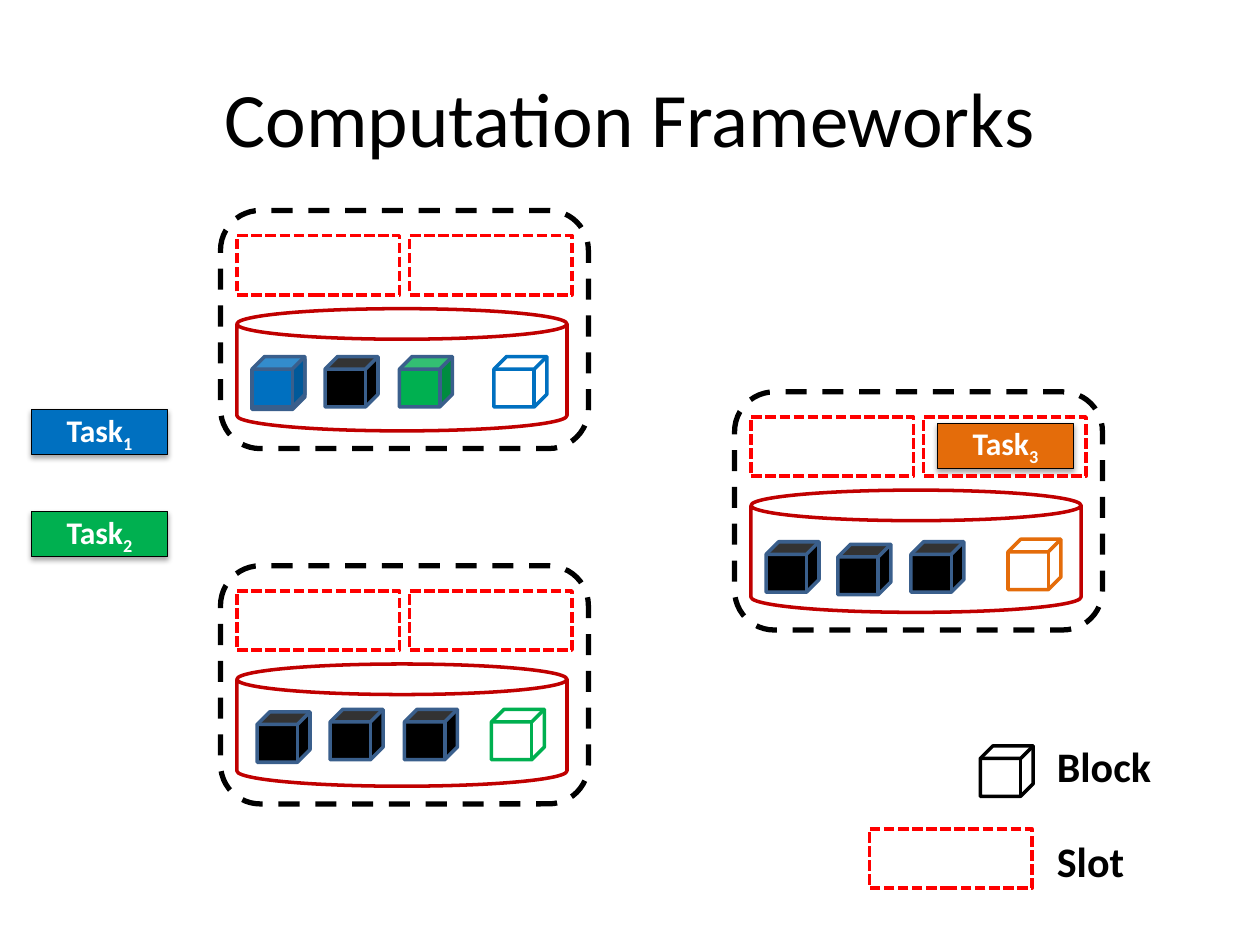
from dataclasses import dataclass

import pptx
import pptx.dml.color
import pptx.enum.dml
import pptx.enum.shapes
import pptx.enum.text
import pptx.oxml
import pptx.oxml.ns
import pptx.util

Inches = pptx.util.Inches
Shape = pptx.enum.shapes.MSO_SHAPE
Dash = pptx.enum.dml.MSO_LINE
Align = pptx.enum.text.PP_ALIGN
Anchor = pptx.enum.text.MSO_ANCHOR


@dataclass(frozen=True)
class Theme:
    font: str = "Calibri"
    title_size: int = 44
    legend_size: int = 24
    task_size: int = 18
    black: str = "000000"
    white: str = "FFFFFF"
    blue: str = "0070C0"
    green: str = "00B050"
    orange: str = "E46C0A"
    block_edge: str = "3A5F8C"
    disk: str = "C00000"
    slot: str = "FF0000"


THEME = Theme()
SLOT_SIZE = (1.29, 0.47)
SLOT_PITCH = 1.37


def rgb(value):
    return pptx.dml.color.RGBColor.from_string(value)


def add_run(paragraph, text, size, color, bold=False):
    run = paragraph.add_run()
    run.text = text
    run.font.name = THEME.font
    run.font.size = pptx.util.Pt(size)
    run.font.bold = bold
    run.font.color.rgb = rgb(color)
    return run


def add_outline(slide, preset, left, top, size, color, width=2, dash=None, fill=None):
    """Add a preset shape, hollow unless a fill is given."""
    shape = slide.shapes.add_shape(
        preset, Inches(left), Inches(top), *map(Inches, size))
    shape.shadow.inherit = False
    if fill:
        shape.fill.solid()
        shape.fill.fore_color.rgb = rgb(fill)
    else:
        shape.fill.background()
    shape.line.color.rgb = rgb(color)
    shape.line.width = pptx.util.Pt(width)
    if dash:
        shape.line.dash_style = dash
    return shape


def add_soft_shadow(shape):
    effects = shape._element.spPr.find(pptx.oxml.ns.qn("a:effectLst"))
    effects.append(pptx.oxml.parse_xml(
        f'<a:outerShdw {pptx.oxml.ns.nsdecls("a")} blurRad="39370" dist="22860"'
        ' dir="5400000" rotWithShape="0">'
        f'<a:srgbClr val="{THEME.black}"><a:alpha val="35000"/></a:srgbClr>'
        '</a:outerShdw>'))


def add_title(slide, text):
    title = slide.shapes.title
    title.left, title.top, title.width, title.height = map(
        Inches, (0.5, 0.3, 9, 1.25))
    title.text_frame.vertical_anchor = Anchor.MIDDLE
    heading = title.text_frame.paragraphs[0]
    heading.alignment = Align.CENTER
    add_run(heading, text, THEME.title_size, THEME.black)


def add_task(slide, number, left, top, color):
    task = add_outline(slide, Shape.RECTANGLE, left, top, (1.08, 0.36),
                       THEME.black, width=0.75, fill=color)
    add_soft_shadow(task)
    task.text_frame.vertical_anchor = Anchor.MIDDLE
    label = task.text_frame.paragraphs[0]
    label.alignment = Align.CENTER
    add_run(label, "Task", THEME.task_size, THEME.white, bold=True)
    subscript = add_run(label, str(number), THEME.task_size, THEME.white, bold=True)
    subscript.font._element.set("baseline", "-25000")


def add_slot(slide, left, top):
    add_outline(slide, Shape.RECTANGLE, left, top, SLOT_SIZE, THEME.slot,
                dash=Dash.SQUARE_DOT)


def add_block(slide, left, top, edge=THEME.block_edge, fill=None):
    add_outline(slide, Shape.CUBE, left, top, (0.42, 0.4), edge, fill=fill)


def add_machine(slide, left, top, stored, output):
    """Draw a machine; stored is (x, y, fill) and output (x, y, edge), from its corner."""
    add_outline(slide, Shape.ROUNDED_RECTANGLE, left, top, (2.92, 1.89),
                THEME.black, width=3, dash=Dash.DASH)
    add_outline(slide, Shape.CAN, left + 0.13, top + 0.78, (2.62, 0.97), THEME.disk)
    for column in range(2):
        add_slot(slide, left + 0.13 + column * SLOT_PITCH, top + 0.2)
    for x, y, fill in stored:
        add_block(slide, left + x, top + y, fill=fill)
    x, y, edge = output
    add_block(slide, left + x, top + y, edge=edge)


def add_legend_label(slide, text, top):
    label = slide.shapes.add_textbox(
        Inches(8.29), Inches(top), Inches(1.46), Inches(0.5))
    label.text_frame.word_wrap = True
    add_run(label.text_frame.paragraphs[0], text, THEME.legend_size,
            THEME.black, bold=True)


def main():
    deck = pptx.Presentation()
    deck.slide_width, deck.slide_height = Inches(10), Inches(7.5)
    slide = deck.slides.add_slide(deck.slide_layouts.get_by_name("Title Only"))
    add_title(slide, "Computation Frameworks")

    add_task(slide, 2, 0.25, 4.06, THEME.green)
    add_task(slide, 1, 0.25, 3.25, THEME.blue)
    add_task(slide, 3, 7.44, 3.36, THEME.orange)

    black = THEME.black
    add_machine(slide, 1.75, 1.67,
                [(0.25, 1.18, THEME.blue), (0.25, 1.16, THEME.blue),
                 (0.83, 1.16, black), (1.42, 1.16, THEME.green)],
                (2.17, 1.16, THEME.blue))
    add_machine(slide, 1.75, 4.49,
                [(0.29, 1.16, black), (0.87, 1.14, black), (1.46, 1.14, black)],
                (2.15, 1.14, THEME.green))
    add_machine(slide, 5.83, 3.11,
                [(0.25, 1.19, black), (0.82, 1.21, black), (1.4, 1.19, black)],
                (2.17, 1.17, THEME.orange))

    add_block(slide, 7.78, 5.92, edge=black)
    add_legend_label(slide, "Block", 5.83)
    add_slot(slide, 6.9, 6.58)
    add_legend_label(slide, "Slot", 6.58)

    deck.save("out.pptx")


if __name__ == "__main__":
    main()
